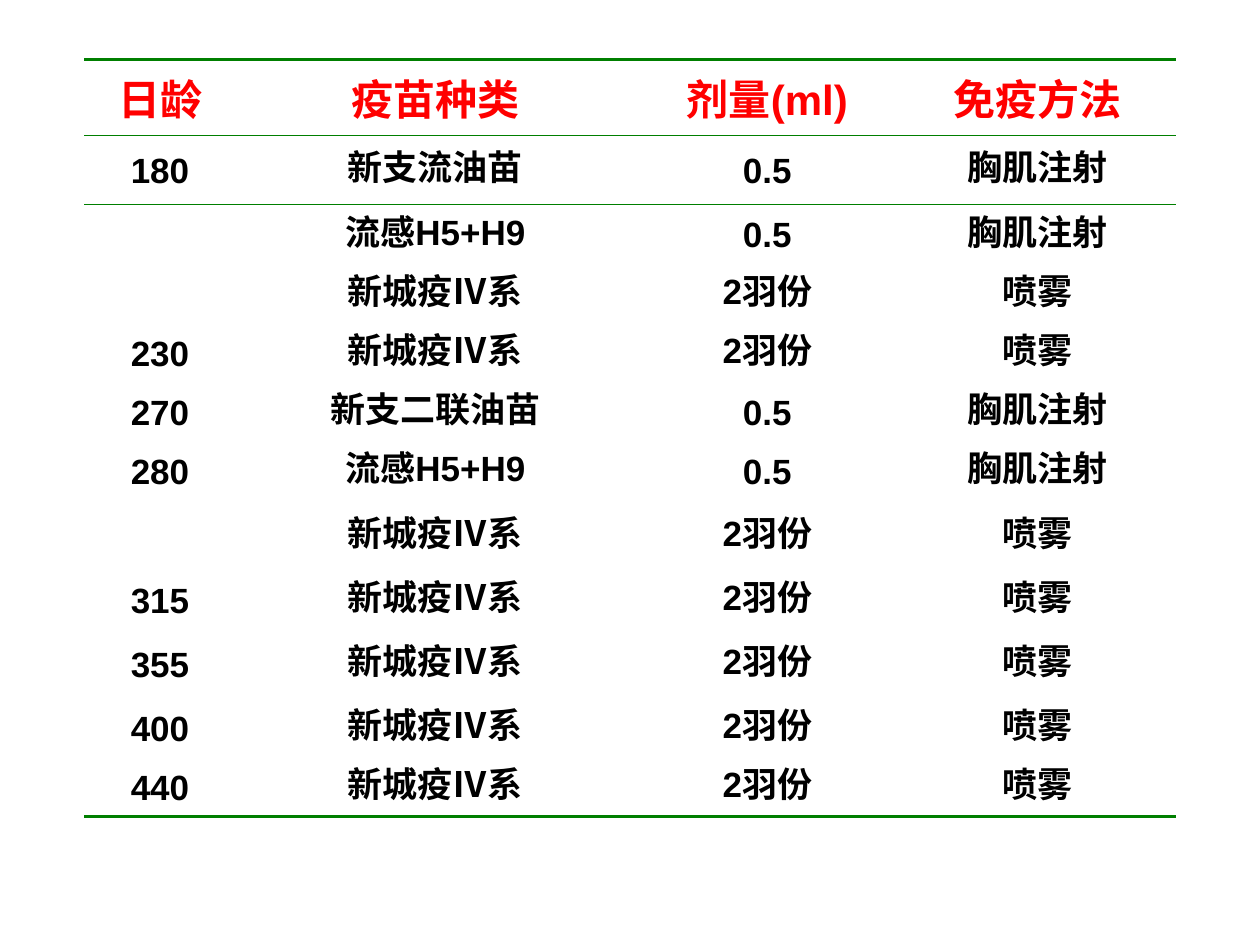
"""Build a slide with a vaccination schedule for laying hens."""
from dataclasses import dataclass

from lxml import etree
from pptx import Presentation
from pptx.dml.color import RGBColor
from pptx.enum import text
from pptx.oxml import ns
from pptx.table import _Cell
from pptx.util import Inches, Pt

GREEN = RGBColor(0x00, 0x7F, 0x00)
RED = RGBColor(0xFF, 0x00, 0x00)
BLACK = RGBColor(0x00, 0x00, 0x00)
NO_STYLE = "{2D5ABB26-0587-4C30-8999-92F81FD0307C}"
HANGING = Inches(0.38)
COLUMN_WIDTHS = (1.2, 3.17, 2.1, 2.19)
HEADINGS = ("日龄", "疫苗种类", "剂量(ml)", "免疫方法")


@dataclass(frozen=True)
class Vaccine:
    name: str
    dose: str
    method: str


@dataclass(frozen=True)
class Vaccination:
    age: str
    vaccine: Vaccine
    height: float = 0.47


@dataclass(frozen=True)
class CellStyle:
    size: int
    color: RGBColor
    line_spacing: int | None = None


HEADING_STYLE = CellStyle(24, RED)
BODY_STYLE = CellStyle(20, BLACK, 24)

TRIPLE = Vaccine("新支流油苗", "0.5", "胸肌注射")
DOUBLE = Vaccine("新支二联油苗", "0.5", "胸肌注射")
FLU = Vaccine("流感H5+H9", "0.5", "胸肌注射")
NEWCASTLE = Vaccine("新城疫Ⅳ系", "2羽份", "喷雾")

SCHEDULE = (
    Vaccination("180", TRIPLE, 0.55),
    Vaccination("", FLU),
    Vaccination("", NEWCASTLE),
    Vaccination("230", NEWCASTLE),
    Vaccination("270", DOUBLE),
    Vaccination("280", FLU),
    Vaccination("", NEWCASTLE, 0.55),
    Vaccination("315", NEWCASTLE),
    Vaccination("355", NEWCASTLE, 0.55),
    Vaccination("400", NEWCASTLE),
    Vaccination("440", NEWCASTLE),
)


def write_cell(cell: _Cell, content: str, style: CellStyle) -> None:
    cell.fill.background()
    cell.vertical_anchor = text.MSO_ANCHOR.MIDDLE
    cell.margin_left = cell.margin_right = Inches(0.1)
    cell.margin_top = cell.margin_bottom = Inches(0.06)
    if not content:
        return
    paragraph = cell.text_frame.paragraphs[0]
    paragraph.text = content
    paragraph.alignment = text.PP_ALIGN.CENTER
    if style.line_spacing:
        paragraph.line_spacing = Pt(style.line_spacing)
    properties = paragraph._p.get_or_add_pPr()
    properties.set("marL", str(HANGING))
    properties.set("indent", str(-HANGING))
    for run in paragraph.runs:
        run.font.name = "Arial"
        run.font.size = Pt(style.size)
        run.font.bold = True
        run.font.color.rgb = style.color


def add_rules(cell: _Cell, **widths: int) -> None:
    properties = cell._tc.get_or_add_tcPr()
    for position, (edge, width) in enumerate(widths.items()):
        rule = etree.Element(ns.qn(f"a:{edge}"), w=str(Pt(width)))
        fill = etree.SubElement(rule, ns.qn("a:solidFill"))
        etree.SubElement(fill, ns.qn("a:srgbClr"), val=str(GREEN))
        properties.insert(position, rule)


def main() -> None:
    deck = Presentation()
    deck.slide_width, deck.slide_height = Inches(10), Inches(7.5)
    slide = deck.slides.add_slide(deck.slide_layouts[6])

    heights = [0.6, *(entry.height for entry in SCHEDULE)]
    schedule = slide.shapes.add_table(
        len(heights), len(COLUMN_WIDTHS), Inches(0.67), Inches(0.47),
        Inches(sum(COLUMN_WIDTHS)), Inches(sum(heights)),
    ).table
    schedule.first_row = schedule.horz_banding = False
    schedule._tbl.tblPr.find(ns.qn("a:tableStyleId")).text = NO_STYLE
    for column, width in zip(schedule.columns, COLUMN_WIDTHS):
        column.width = Inches(width)
    for row, height in zip(schedule.rows, heights):
        row.height = Inches(height)

    lines = [HEADINGS] + [
        (entry.age, entry.vaccine.name, entry.vaccine.dose, entry.vaccine.method)
        for entry in SCHEDULE
    ]
    for index, line in enumerate(lines):
        style = BODY_STYLE if index else HEADING_STYLE
        for column, content in enumerate(line):
            write_cell(schedule.cell(index, column), content, style)

    for column in range(len(COLUMN_WIDTHS)):
        add_rules(schedule.cell(0, column), lnT=2, lnB=1)
        add_rules(schedule.cell(1, column), lnT=1)
        add_rules(schedule.cell(len(SCHEDULE), column), lnB=2)

    deck.save("out.pptx")


if __name__ == "__main__":
    main()
